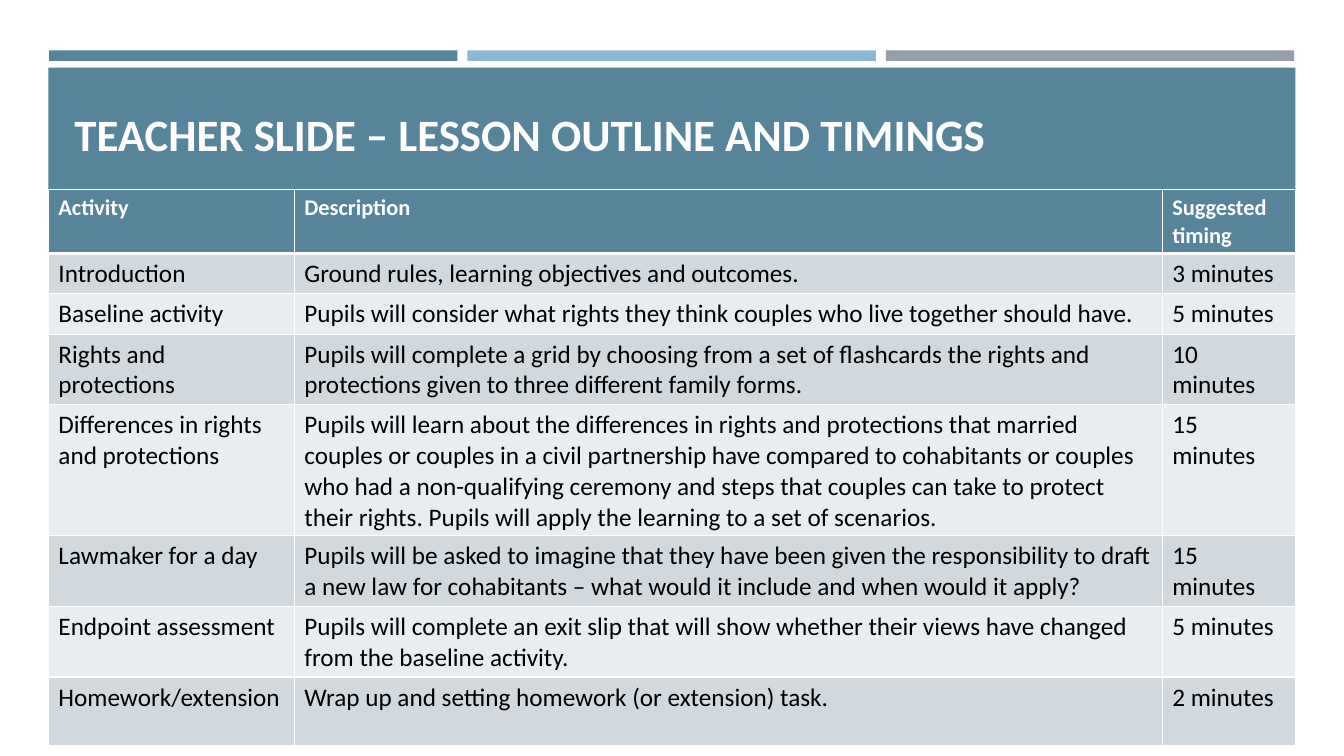
from lxml import etree
from pptx import Presentation
from pptx import util as u
from pptx.dml import color
from pptx.enum import shapes, text
from pptx.oxml import ns

COLORS = {
    "teal": "56859B",
    "sky": "89B9D3",
    "grey": "969FA7",
    "band_dark": "D1D9DE",
    "band_light": "E9EDEF",
    "white": "FFFFFF",
    "black": "000000",
}

LESSON = [
    ("Activity", "Description", "Suggested timing"),
    ("Introduction", "Ground rules, learning objectives and outcomes.", "3 minutes"),
    ("Baseline activity",
     "Pupils will consider what rights they think couples who live together should have.",
     "5 minutes"),
    ("Rights and protections",
     "Pupils will complete a grid by choosing from a set of flashcards the rights and "
     "protections given to three different family forms.",
     "10 minutes"),
    ("Differences in rights and protections",
     "Pupils will learn about the differences in rights and protections that married "
     "couples or couples in a civil partnership have compared to cohabitants or couples "
     "who had a non-qualifying ceremony and steps that couples can take to protect "
     "their rights. Pupils will apply the learning to a set of scenarios.",
     "15 minutes"),
    ("Lawmaker for a day",
     "Pupils will be asked to imagine that they have been given the responsibility to draft "
     "a new law for cohabitants – what would it include and when would it apply?",
     "15 minutes"),
    ("Endpoint assessment",
     "Pupils will complete an exit slip that will show whether their views have changed "
     "from the baseline activity.",
     "5 minutes"),
    ("Homework/extension", "Wrap up and setting homework (or extension) task.", "2 minutes"),
]
COLUMN_SHARES = (18.3, 64.58, 9.9)
ROW_SHARES = (8.13, 5.2, 5.2, 5.73, 9.07, 9.07, 5.2, 9.07)


class SlideBuilder:
    font = "Calibri"

    def __init__(self, presentation):
        self.width = presentation.slide_width
        self.height = presentation.slide_height
        self.slide = presentation.slides.add_slide(presentation.slide_layouts[6])

    def across(self, share):
        return round(self.width * share / 100)

    def down(self, share):
        return round(self.height * share / 100)

    def box(self, left, top, width, height):
        return self.across(left), self.down(top), self.across(width), self.down(height)

    def paint(self, fill, name):
        fill.solid()
        fill.fore_color.rgb = color.RGBColor.from_string(COLORS[name])

    def label(self, frame, words, size, name, bold):
        frame.word_wrap = True
        paragraph = frame.paragraphs[0]
        paragraph.text = words
        font = paragraph.font
        font.name, font.size, font.bold = self.font, u.Pt(size), bold
        font.color.rgb = color.RGBColor.from_string(COLORS[name])

    def bar(self, left, top, width, height, name):
        shape = self.slide.shapes.add_shape(
            shapes.MSO_SHAPE.RECTANGLE, *self.box(left, top, width, height))
        shape.shadow.inherit = False
        self.paint(shape.fill, name)
        shape.line.fill.background()

    def title(self, left, top, width, height, words):
        shape = self.slide.shapes.add_textbox(*self.box(left, top, width, height))
        self.label(shape.text_frame, words, 32, "white", True)
        shape.text_frame.vertical_anchor = text.MSO_ANCHOR.MIDDLE

    def borders(self, cell, top, bottom):
        properties = cell._tc.get_or_add_tcPr()
        for side, points in (("L", 1), ("R", 1), ("T", top), ("B", bottom)):
            line = etree.SubElement(properties, ns.qn(f"a:ln{side}"), w=str(u.Pt(points)))
            fill = etree.SubElement(line, ns.qn("a:solidFill"))
            etree.SubElement(fill, ns.qn("a:srgbClr"), val=COLORS["white"])

    def table(self, left, top, columns, rows, content):
        frame = self.slide.shapes.add_table(
            len(rows), len(columns), *self.box(left, top, sum(columns), sum(rows)))
        table = frame.table
        table.horz_banding = False
        for column, share in zip(table.columns, columns):
            column.width = self.across(share)
        for index, (row, share, entries) in enumerate(zip(table.rows, rows, content)):
            row.height = self.down(share)
            header = index == 0
            band = "teal" if header else ("band_light", "band_dark")[index % 2]
            for cell, words in zip(row.cells, entries):
                self.borders(cell, 3 if index == 1 else 1, 3 if header else 1)
                self.paint(cell.fill, band)
                self.label(cell.text_frame, words, 16 if header else 18,
                           "white" if header else "black", header)


def main():
    presentation = Presentation()
    presentation.slide_width = u.Inches(13.33)
    presentation.slide_height = u.Inches(7.5)
    builder = SlideBuilder(presentation)

    left, width, gap = 3.65, 92.65, 0.75
    stripe = (width - 2 * gap) / 3
    for index, name in enumerate(("teal", "sky", "grey")):
        builder.bar(left + index * (stripe + gap), 6.67, stripe, 1.4, name)

    builder.bar(3.6, 8.95, sum(COLUMN_SHARES), 17.33, "teal")
    builder.title(4.8, 10.27, 90.45, 14.8, "TEACHER SLIDE – LESSON OUTLINE AND TIMINGS")
    builder.table(3.6, 25.07, COLUMN_SHARES, ROW_SHARES, LESSON)
    presentation.save("out.pptx")


if __name__ == "__main__":
    main()
